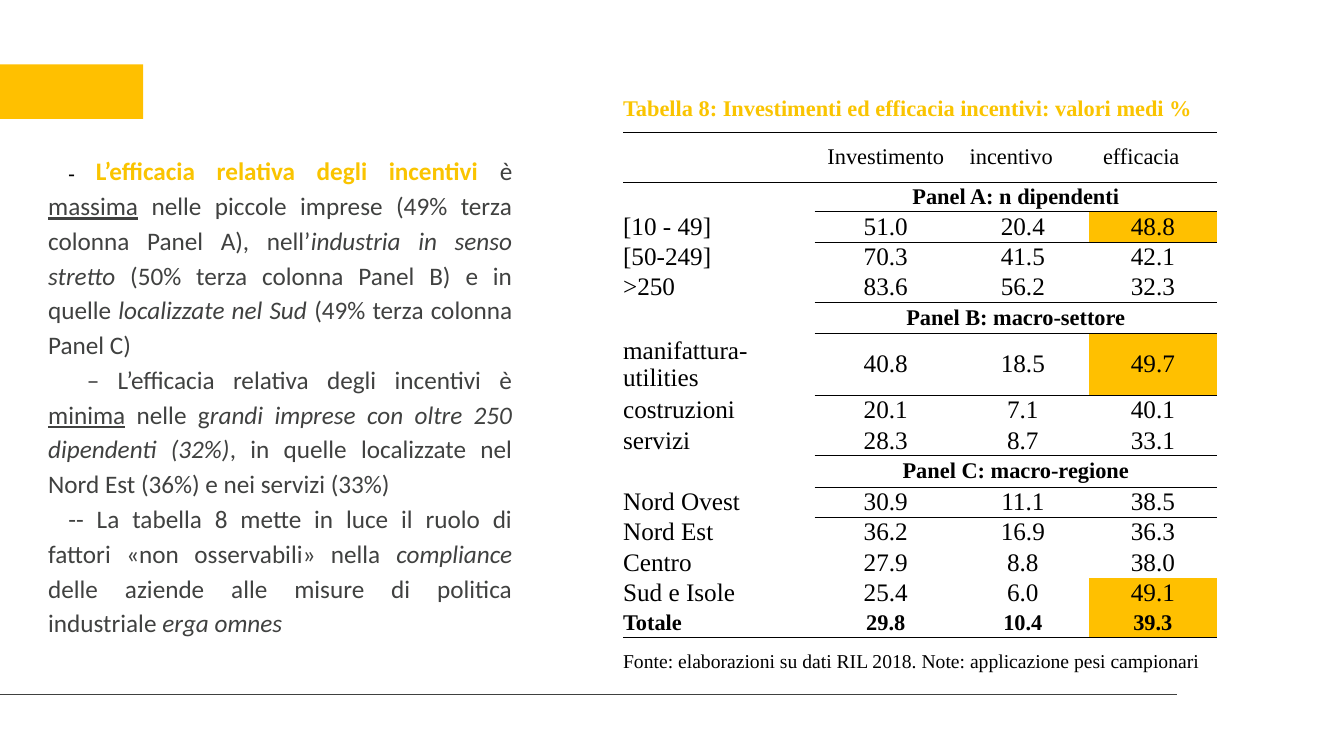
import pptx
import pptx.util
import pptx.dml.color
import pptx.enum.shapes
import pptx.enum.text
import pptx.oxml.ns
import lxml.etree

Inches = pptx.util.Inches
Pt = pptx.util.Pt
ALIGN = pptx.enum.text.PP_ALIGN
COLORS = {"gold": "FFC000", "title": "FAC400", "grey": "404140", "black": "000000"}
NO_STYLE = "{2D5ABB26-0587-4C30-8999-92F81FD0307C}"
MARGINS = ("margin_left", "margin_right", "margin_top", "margin_bottom")
qn = pptx.oxml.ns.qn


def rgb(name):
    return pptx.dml.color.RGBColor.from_string(COLORS[name])


class SlideBuilder:
    body = {"name": "Calibri", "size": Pt(18)}
    cell = {"name": "Times New Roman", "size": Pt(18)}

    def __init__(self, prs):
        self.s = prs.slides.add_slide(prs.slide_layouts[6])

    def run(self, p, text, fmt, color):
        r = p.add_run()
        r.text = text
        for key, value in fmt.items():
            setattr(r.font, key, value)
        r.font.color.rgb = rgb(color)

    def bar(self, x, y, w, h, color):
        kind = pptx.enum.shapes.MSO_SHAPE.RECTANGLE
        sp = self.s.shapes.add_shape(kind, Inches(x), Inches(y), Inches(w), Inches(h))
        sp.shadow.inherit = False
        sp.fill.solid()
        sp.fill.fore_color.rgb = rgb(color)
        sp.line.fill.background()

    def rule(self, x1, x2, y, color):
        kind = pptx.enum.shapes.MSO_CONNECTOR.STRAIGHT
        cx = self.s.shapes.add_connector(kind, Inches(x1), Inches(y), Inches(x2), Inches(y))
        cx.line.color.rgb = rgb(color)
        cx.line.width = Pt(1)
        lxml.etree.SubElement(cx._element.spPr, qn("a:effectLst"))

    def text(self, x, y, w, h, paragraphs):
        sp = self.s.shapes.add_textbox(Inches(x), Inches(y), Inches(w), Inches(h))
        tf = sp.text_frame
        tf.word_wrap = True
        tf.auto_size = pptx.enum.text.MSO_AUTO_SIZE.SHAPE_TO_FIT_TEXT
        for i, runs in enumerate(paragraphs):
            p = tf.add_paragraph() if i else tf.paragraphs[0]
            p.alignment = ALIGN.JUSTIFY
            p.line_spacing = 1.15
            p._p.get_or_add_pPr().set("indent", str(Inches(0.2)))
            for text, fmt, color in runs:
                self.run(p, text, {**self.body, **fmt}, color)

    def table(self, x, y, widths, heights):
        frame = self.s.shapes.add_table(len(heights), len(widths), Inches(x), Inches(y),
                                        Inches(sum(widths)), Inches(sum(heights)))
        tbl = frame.table
        tbl.first_row = tbl.horz_banding = False
        tbl._tbl.tblPr.find(qn("a:tableStyleId")).text = NO_STYLE
        for col, w in zip(tbl.columns, widths):
            col.width = Inches(w)
        for row, h in zip(tbl.rows, heights):
            row.height = Inches(h)
        for cell in tbl.iter_cells():
            for margin in MARGINS:
                setattr(cell, margin, 0)
            cell.vertical_anchor = pptx.enum.text.MSO_ANCHOR.MIDDLE
            cell.text_frame.paragraphs[0]._p.get_or_add_endParaRPr().set("sz", "1400")
        return tbl

    def border(self, cell, side):
        ln = lxml.etree.SubElement(cell._tc.get_or_add_tcPr(), qn("a:" + side), w=str(Pt(0.5)))
        fill = lxml.etree.SubElement(ln, qn("a:solidFill"))
        lxml.etree.SubElement(fill, qn("a:srgbClr"), val=COLORS["black"])

    def fill_cell(self, cell, text, fmt, color="black", align=ALIGN.CENTER):
        p = cell.text_frame.paragraphs[0]
        p.alignment = align
        self.run(p, text, {**self.cell, **fmt}, color)


ITALIC = {"italic": True}
UNDERLINE = {"underline": True}
BOLD = {"bold": True}
SMALL = {"size": Pt(16)}
HEAVY = {**SMALL, **BOLD}

NOTES = [
    [("- ", {"name": "Times New Roman", "size": Pt(14), **BOLD}, "black"),
     ("L’efficacia relativa degli incentivi ", BOLD, "title"),
     ("è ", {}, "grey"),
     ("massima", UNDERLINE, "grey"),
     (" nelle piccole imprese (49% terza colonna Panel A), nell’", {}, "grey"),
     ("industria in senso stretto", ITALIC, "grey"),
     (" (50% terza colonna Panel B) e in quelle ", {}, "grey"),
     ("localizzate nel Sud ", ITALIC, "grey"),
     ("(49% terza colonna Panel C)", {}, "grey")],
    [(" – L’efficacia relativa degli incentivi è ", {}, "grey"),
     ("minima", UNDERLINE, "grey"),
     (" nelle g", {}, "grey"),
     ("randi imprese con oltre 250 dipendenti (32%)", ITALIC, "grey"),
     (", in quelle localizzate nel Nord Est (36%) e nei servizi (33%)", {}, "grey")],
    [("-- La tabella 8 mette in luce il ruolo di fattori «non osservabili» nella ", {}, "grey"),
     ("compliance", ITALIC, "grey"),
     (" delle aziende alle misure di politica industriale ", {}, "grey"),
     ("erga omnes", ITALIC, "grey")],
]

ROWS = [
    ("title", 0.46, ["Tabella 8: Investimenti ed efficacia incentivi: valori medi %"]),
    ("header", 0.5, ["Investimento", "incentivo", "efficacia"]),
    ("panel", 0.29, ["Panel A: n dipendenti"]),
    ("data", 0.3, ["[10 - 49]", "51.0", "20.4", "48.8"]),
    ("data", 0.3, ["[50-249]", "70.3", "41.5", "42.1"]),
    ("data", 0.3, [">250", "83.6", "56.2", "32.3"]),
    ("panel", 0.31, ["Panel B: macro-settore"]),
    ("data", 0.61, ["manifattura-utilities", "40.8", "18.5", "49.7"]),
    ("data", 0.3, ["costruzioni", "20.1", "7.1", "40.1"]),
    ("data", 0.3, ["servizi", "28.3", "8.7", "33.1"]),
    ("panel", 0.31, ["Panel C: macro-regione"]),
    ("data", 0.3, ["Nord Ovest", "30.9", "11.1", "38.5"]),
    ("data", 0.3, ["Nord Est", "36.2", "16.9", "36.3"]),
    ("data", 0.3, ["Centro", "27.9", "8.8", "38.0"]),
    ("data", 0.3, ["Sud e Isole", "25.4", "6.0", "49.1"]),
    ("total", 0.29, ["Totale", "29.8", "10.4", "39.3"]),
    ("source", 0.48, ["Fonte: elaborazioni su dati RIL 2018. Note: applicazione pesi campionari"]),
]
SPANS = {
    "title": [(0, 4)], "source": [(0, 4)], "panel": [(1, 4)],
    "header": [(1, 1), (2, 2), (3, 4)],
    "data": [(0, 0), (1, 1), (2, 3), (4, 4)],
    "total": [(0, 0), (1, 1), (2, 3), (4, 4)],
}
FORMATS = {"title": HEAVY, "header": SMALL, "panel": HEAVY, "data": {},
           "total": HEAVY, "source": {"size": Pt(14)}}
HIGHLIGHTS = {"48.8", "49.7", "49.1", "39.3"}


def rule_start(r):
    kind = ROWS[r][0]
    if kind in ("title", "total"):
        return 0
    if kind in ("header", "panel") or ROWS[r + 1:r + 2] and ROWS[r + 1][0] == "panel":
        return 1
    return 5


def main():
    prs = pptx.Presentation()
    prs.slide_width, prs.slide_height = Inches(13.33), Inches(7.5)
    b = SlideBuilder(prs)
    b.bar(0, 0.64, 1.42, 0.54, "gold")
    b.rule(0, 11.67, 6.89, "grey")
    b.text(0.38, 1.45, 4.8, 4.98, NOTES)

    tbl = b.table(6.18, 0.85, [1.9, 1.41, 1.08, 0.23, 1.27], [row[1] for row in ROWS])
    for r, (kind, height, texts) in enumerate(ROWS):
        for c in range(5):
            if r and c >= rule_start(r - 1):
                b.border(tbl.cell(r, c), "lnT")
            if c >= rule_start(r):
                b.border(tbl.cell(r, c), "lnB")
            tbl.cell(r, c).fill.background()
        for (first, last), text in zip(SPANS[kind], texts):
            cell = tbl.cell(r, first)
            if last > first:
                cell.merge(tbl.cell(r, last))
            color = "title" if kind == "title" else "black"
            align = ALIGN.CENTER if first else ALIGN.LEFT
            b.fill_cell(cell, text, FORMATS[kind], color, align)
            if text in HIGHLIGHTS:
                cell.fill.solid()
                cell.fill.fore_color.rgb = rgb("gold")
    prs.save("out.pptx")


if __name__ == "__main__":
    main()
